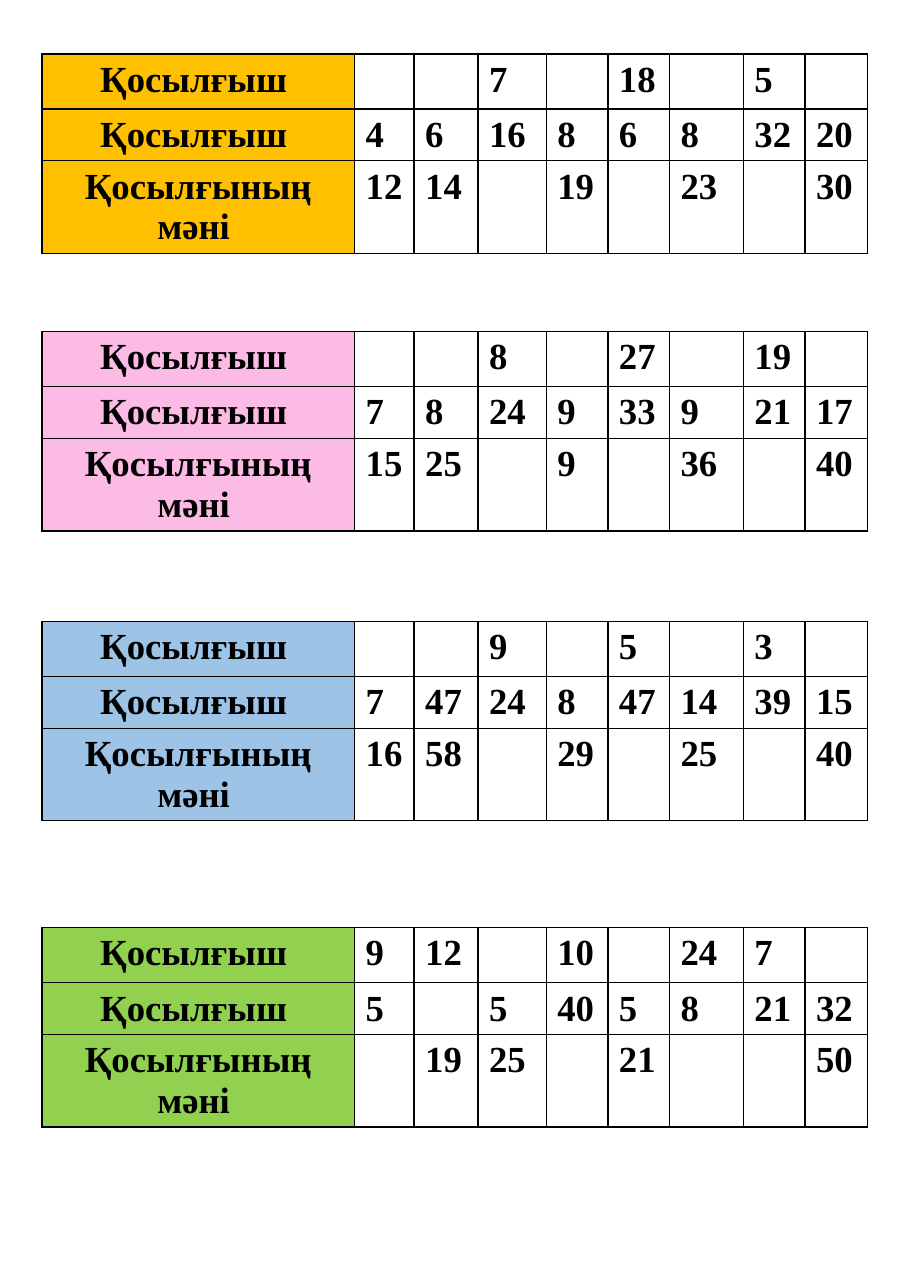
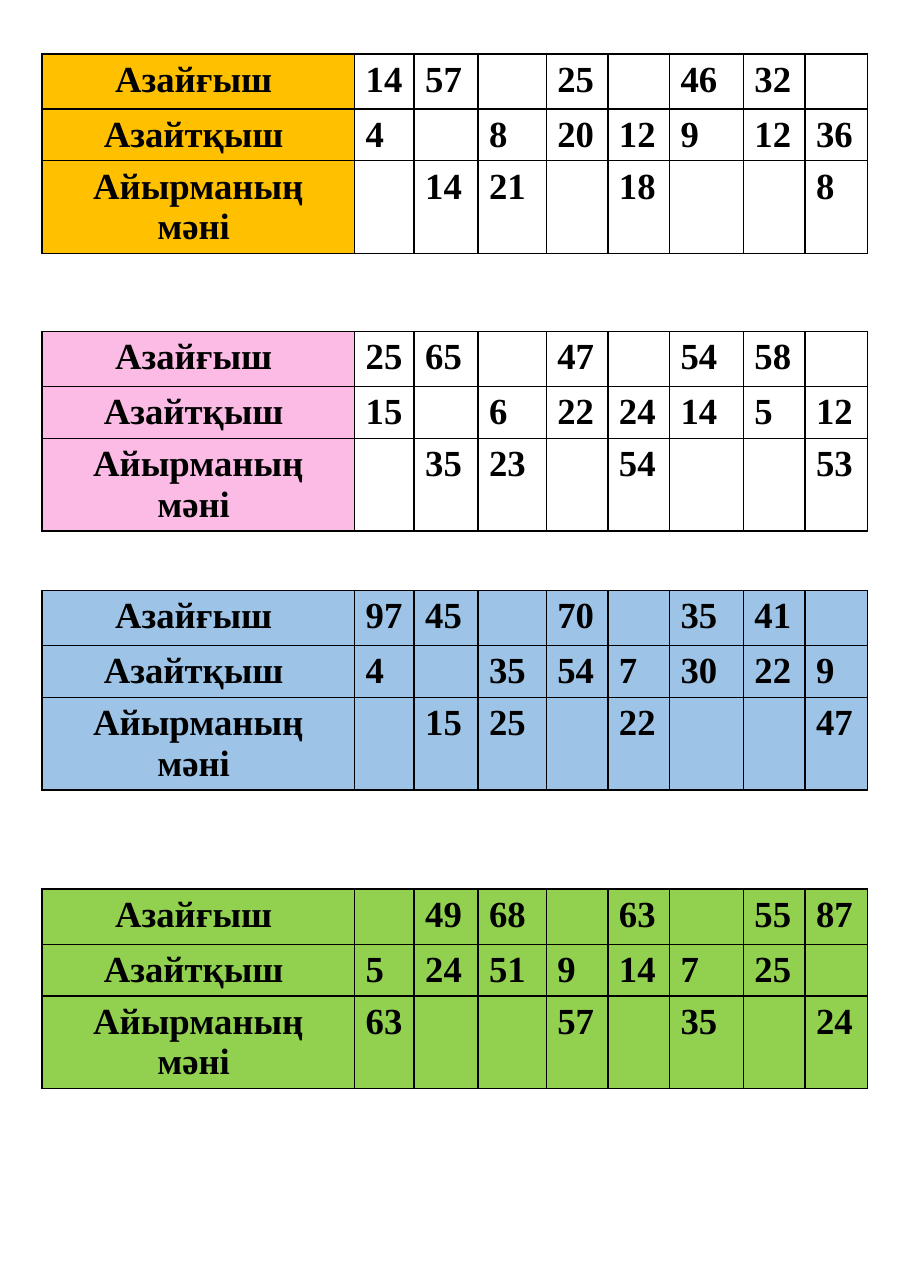
"""Build two worksheets of addition and subtraction tables."""
from lxml.etree import SubElement
from pptx import Presentation
from pptx.dml.color import RGBColor
from pptx.enum.text import PP_ALIGN
from pptx.oxml.ns import qn
from pptx.util import Pt

PX = 9144
HUES = {"gold": "FFC000", "pink": "FBBBE4", "blue": "9DC3E6",
        "green": "92D050", "ink": "000000"}
FONT = "Times New Roman"
LEFT = 38
COLS = [284, 54, 58, 62, 56, 56, 67, 56, 57]
ROWS = [50, 47, 84]

SHEETS = [
    (["Қосылғыш ", "Қосылғыш ", "Қосылғының мәні "], [
        ("gold", 49, False, ["- - 7 - 18 - 5 -",
                             "4 6 16 8 6 8 32 20",
                             "12 14 - 19 - 23 - 30"]),
        ("pink", 301, False, ["- - 8 - 27 - 19 -",
                              "7 8 24 9 33 9 21 17",
                              "15 25 - 9 - 36 - 40"]),
        ("blue", 564, False, ["- - 9 - 5 - 3 -",
                              "7 47 24 8 47 14 39 15",
                              "16 58 - 29 - 25 - 40"]),
        ("green", 842, False, ["9 12 - 10 - 24 7 -",
                               "5 - 5 40 5 8 21 32",
                               "- 19 25 - 21 - - 50"]),
    ]),
    (["Азайғыш ", "Азайтқыш ", "Айырманың мәні "], [
        ("gold", 49, False, ["14 57 - 25 - 46 32 -",
                             "4 - 8 20 12 9 12 36",
                             "- 14 21 - 18 - - 8"]),
        ("pink", 301, False, ["25 65 - 47 - 54 58 -",
                              "15 - 6 22 24 14 5 12",
                              "- 35 23 - 54 - - 53"]),
        ("blue", 536, True, ["97 45 - 70 - 35 41 -",
                             "4 - 35 54 7 30 22 9",
                             "- 15 25 - 22 - - 47"]),
        ("green", 807, True, ["- 49 68 - 63 - 55 87",
                              "5 24 51 9 14 7 25 -",
                              "63 - - 57 - 35 - 24"]),
    ]),
]


def frame(cell):
    props = cell._tc.get_or_add_tcPr()
    for side in ("a:lnL", "a:lnR", "a:lnT", "a:lnB"):
        line = SubElement(props, qn(side), w=str(Pt(1)))
        fill = SubElement(line, qn("a:solidFill"))
        SubElement(fill, qn("a:srgbClr"), val=HUES["ink"])


def write(cell, text):
    run = cell.text_frame.paragraphs[0].add_run()
    run.text = text
    run.font.name = FONT
    run.font.size = Pt(24)
    run.font.bold = True
    run.font.color.rgb = RGBColor.from_string(HUES["ink"])


deck = Presentation()
deck.slide_width = 827 * PX
deck.slide_height = 1169 * PX

for heads, grids in SHEETS:
    slide = deck.slides.add_slide(deck.slide_layouts[6])
    for hue, top, full, lines in grids:
        table = slide.shapes.add_table(
            len(ROWS), len(COLS), LEFT * PX, top * PX,
            sum(COLS) * PX, sum(ROWS) * PX).table
        table.first_row = False
        table.horz_banding = False
        for col, width in zip(table.columns, COLS):
            col.width = width * PX
        for row, height, head, line in zip(table.rows, ROWS, heads, lines):
            row.height = height * PX
            for spot, text in enumerate([head] + line.split()):
                cell = row.cells[spot]
                frame(cell)
                if full or spot == 0:
                    cell.fill.solid()
                    cell.fill.fore_color.rgb = RGBColor.from_string(HUES[hue])
                else:
                    cell.fill.background()
                if text != "-":
                    write(cell, text)
            row.cells[0].text_frame.paragraphs[0].alignment = PP_ALIGN.CENTER

deck.save("out.pptx")
